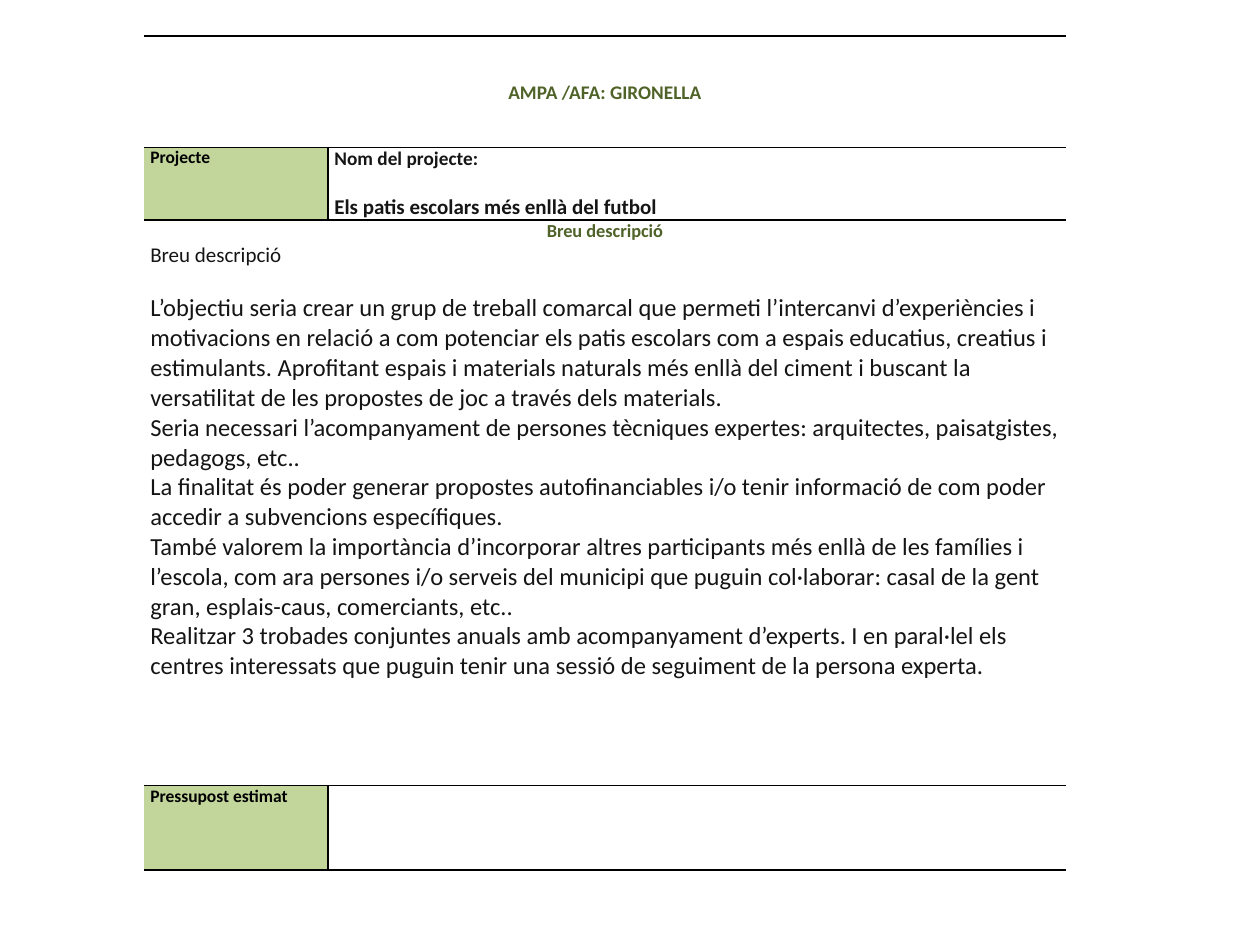
from lxml.etree import SubElement
from pptx import Presentation
from pptx.dml.color import RGBColor
from pptx.enum.text import PP_ALIGN
from pptx.oxml.ns import qn
from pptx.util import Cm, Pt

THEME = {
    "font": "Calibri",
    "label_fill": "C2D69B",
    "border": "000000",
    "border_width": Pt(1),
    "styles": {
        "title": {"size": 11, "color": "4F6228", "bold": True, "align": PP_ALIGN.CENTER},
        "heading": {"size": 10.5, "color": "4F6228", "bold": True, "align": PP_ALIGN.CENTER},
        "label": {"size": 10, "color": "000000", "bold": True},
        "caption": {"size": 11, "color": "151516", "bold": True},
        "project": {"size": 12, "color": "151516", "bold": True, "before": 13.4},
        "intro": {"size": 12, "color": "151516"},
        "lead": {"size": 14, "color": "151516", "before": 14.6},
        "body": {"size": 14, "color": "151516"},
    },
}

DESCRIPTION = [
    ("heading", "Breu descripció"),
    ("intro", "Breu descripció"),
    ("lead", "L’objectiu seria crear un grup de treball comarcal que permeti l’intercanvi "
             "d’experiències i motivacions en relació a com potenciar els patis escolars com a "
             "espais educatius, creatius i estimulants. Aprofitant espais i materials naturals "
             "més enllà del ciment i buscant la versatilitat de les propostes de joc a través "
             "dels materials."),
    ("body", "Seria necessari l’acompanyament de persones tècniques expertes: arquitectes, "
             "paisatgistes, pedagogs, etc.."),
    ("body", "La finalitat és poder generar propostes autofinanciables i/o tenir informació de "
             "com poder accedir a subvencions específiques."),
    ("body", "També valorem la importància d’incorporar altres participants més enllà de les "
             "famílies i l’escola, com ara persones i/o serveis del municipi que puguin "
             "col·laborar: casal de la gent gran, esplais-caus, comerciants, etc.."),
    ("body", "Realitzar 3 trobades conjuntes anuals amb acompanyament d’experts. I en paral·lel "
             "els centres interessats que puguin tenir una sessió de seguiment de la persona "
             "experta."),
]

# A row with a single cell spans both columns.
ROWS = [
    {"height": 2.24, "top": 0.9, "cells": [[("title", "AMPA /AFA: GIRONELLA")]]},
    {"height": 1.45, "cells": [
        [("label", "Projecte")],
        [("caption", "Nom del projecte:"),
         ("project", "Els patis escolars més enllà del futbol")],
    ]},
    {"height": 11.4, "cells": [DESCRIPTION]},
    {"height": 1.7, "cells": [[("label", "Pressupost estimat")], []]},
]
COLUMNS = [3.71, 14.88]
LEFT, TOP = 2.9, 0.73


def write(cell, paragraphs):
    frame = cell.text_frame
    for index, (style_name, wording) in enumerate(paragraphs):
        style = THEME["styles"][style_name]
        paragraph = frame.paragraphs[0] if index == 0 else frame.add_paragraph()
        paragraph.alignment = style.get("align", PP_ALIGN.LEFT)
        if "before" in style:
            paragraph.space_before = Pt(style["before"])
        run = paragraph.add_run()
        run.text = wording
        settings = {"name": THEME["font"], "size": Pt(style["size"]),
                    "bold": style.get("bold", False)}
        for attribute, value in settings.items():
            setattr(run.font, attribute, value)
        run.font.color.rgb = RGBColor.from_string(style["color"])


def set_borders(cell, drawn):
    """Draw the named sides (L, R, T, B) and clear the others; call before filling."""
    properties = cell._tc.get_or_add_tcPr()
    for side in "LRTB":
        line = SubElement(properties, qn(f"a:ln{side}"), w=str(THEME["border_width"]))
        if side in drawn:
            fill = SubElement(line, qn("a:solidFill"))
            SubElement(fill, qn("a:srgbClr"), val=THEME["border"])
        else:
            SubElement(line, qn("a:noFill"))


def build_form(slide):
    width, height = sum(COLUMNS), sum(row["height"] for row in ROWS)
    form = slide.shapes.add_table(len(ROWS), len(COLUMNS), Cm(LEFT), Cm(TOP),
                                  Cm(width), Cm(height)).table
    form.first_row = form.horz_banding = False
    for column, column_width in zip(form.columns, COLUMNS):
        column.width = Cm(column_width)

    for row_index, row in enumerate(ROWS):
        form.rows[row_index].height = Cm(row["height"])
        spans = len(row["cells"]) == 1
        if spans:
            form.cell(row_index, 0).merge(form.cell(row_index, 1))
        margins = {"margin_left": Cm(0.13), "margin_right": Cm(0.13),
                   "margin_top": Cm(row.get("top", 0)), "margin_bottom": Cm(0)}
        for column_index, inner_side in enumerate("RL"):
            cell = form.cell(row_index, column_index)
            for attribute, value in margins.items():
                setattr(cell, attribute, value)
            set_borders(cell, "TB" if spans else "TB" + inner_side)
            if column_index == 0 and not spans:
                cell.fill.solid()
                cell.fill.fore_color.rgb = RGBColor.from_string(THEME["label_fill"])
            else:
                cell.fill.background()
        for column_index, paragraphs in enumerate(row["cells"]):
            write(form.cell(row_index, column_index), paragraphs)


def main():
    presentation = Presentation()
    presentation.slide_width, presentation.slide_height = Cm(25.4), Cm(19.05)
    build_form(presentation.slides.add_slide(presentation.slide_layouts[6]))
    presentation.save("out.pptx")


if __name__ == "__main__":
    main()
